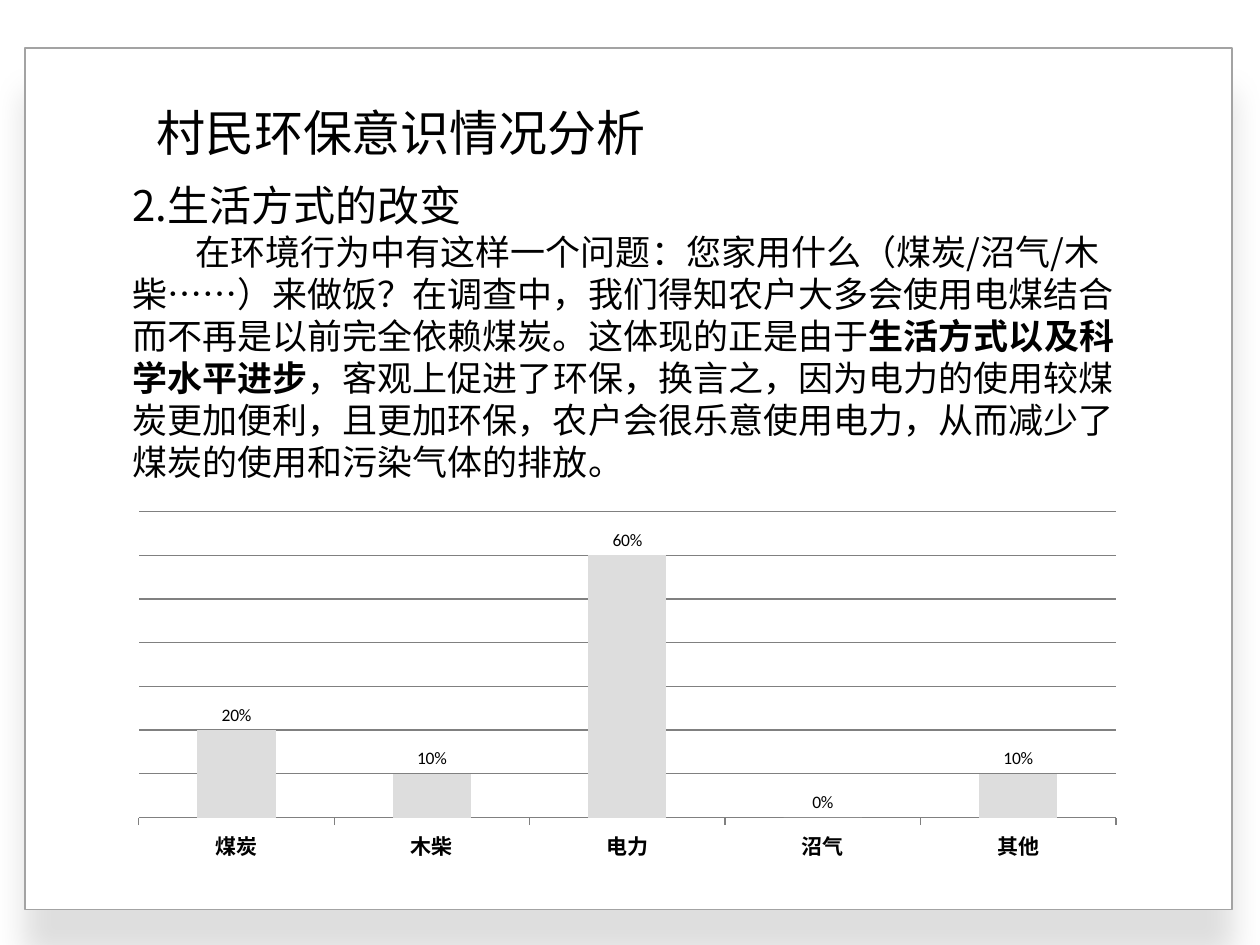
from lxml.etree import SubElement
from pptx import Presentation
from pptx.chart.data import CategoryChartData
from pptx.dml.color import RGBColor
from pptx.enum.chart import XL_CHART_TYPE, XL_LABEL_POSITION, XL_TICK_LABEL_POSITION, XL_TICK_MARK
from pptx.enum.shapes import MSO_SHAPE
from pptx.enum.text import MSO_ANCHOR, MSO_AUTO_SIZE, PP_ALIGN
from pptx.oxml import parse_xml
from pptx.oxml.ns import nsdecls, qn
from pptx.util import Inches, Pt

CJK = "Noto Sans CJK SC"


def color(hex_value):
    return RGBColor.from_string(hex_value)


def format_paragraph(paragraph, size, line_height):
    paragraph.alignment = PP_ALIGN.LEFT
    paragraph.space_before = Pt(0)
    paragraph.line_spacing = Pt(line_height)
    for run in paragraph.runs:
        run.font.size = Pt(size)
        run.font.name = CJK
        run.font.color.rgb = color("000000")
        SubElement(run.font._element, qn("a:ea")).set("typeface", CJK)


deck = Presentation()
deck.slide_width, deck.slide_height = Inches(10), Inches(7.5)
slide = deck.slides.add_slide(deck.slide_layouts[1])
title, body = slide.placeholders

# Framed page with a soft shadow, behind everything else
frame = slide.shapes.add_shape(MSO_SHAPE.RECTANGLE, Inches(0.2), Inches(0.38),
                               Inches(9.58), Inches(6.84))
frame.fill.solid()
frame.fill.fore_color.rgb = color("FFFFFF")
frame.line.color.rgb = color("A3A3A3")
frame.line.width = Pt(1)
frame._element.spPr.append(parse_xml(
    f'<a:effectLst {nsdecls("a")}><a:outerShdw blurRad="{Pt(18)}" dist="{Pt(26)}" '
    'dir="5400000" algn="ctr" rotWithShape="0"><a:srgbClr val="000000">'
    '<a:alpha val="12000"/></a:srgbClr></a:outerShdw></a:effectLst>'))
slide.shapes._spTree.insert(2, frame._element)

# Title and body placeholders
for holder, box, wrap in ((title, (1.14, 0.73, 4.09, 0.9), False),
                          (body, (0.95, 1.36, 8.21, 2.52), True)):
    holder.left, holder.top, holder.width, holder.height = map(Inches, box)
    holder.text_frame.auto_size = MSO_AUTO_SIZE.NONE
    holder.text_frame.vertical_anchor = MSO_ANCHOR.TOP
    holder.text_frame.word_wrap = wrap

title.text_frame.text = "村民环保意识情况分析"
format_paragraph(title.text_frame.paragraphs[0], 28, 36)

# Heading and explanation, with the key phrase in bold
body.text_frame.text = "2.生活方式的改变"
heading = body.text_frame.paragraphs[0]
explanation = body.text_frame.add_paragraph()
for phrase, bold in (
    ("在环境行为中有这样一个问题：您家用什么（煤炭/沼气/木柴……）来做饭？"
     "在调查中，我们得知农户大多会使用电煤结合而不再是以前完全依赖煤炭。这体现的正是由于", False),
    ("生活方式以及科学水平进步", True),
    ("，客观上促进了环保，换言之，因为电力的使用较煤炭更加便利，且更加环保，"
     "农户会很乐意使用电力，从而减少了煤炭的使用和污染气体的排放。", False),
):
    run = explanation.add_run()
    run.text = phrase
    run.font.bold = bold
for paragraph, size, line_height, indent in ((heading, 24, 30, 0), (explanation, 20, 24, 0.5)):
    properties = paragraph._p.get_or_add_pPr()
    properties.set("marL", "0")
    properties.set("indent", str(Inches(indent)))
    SubElement(properties, qn("a:buNone"))
    format_paragraph(paragraph, size, line_height)

# Cooking fuel chart
fuel_data = CategoryChartData(number_format="0%")
fuel_data.categories = ["煤炭", "木柴", "电力", "沼气", "其他"]
fuel_data.add_series("Series 1", (0.2, 0.1, 0.6, 0, 0.1))
fuel_chart = slide.shapes.add_chart(XL_CHART_TYPE.COLUMN_CLUSTERED, Inches(1.02), Inches(3.88),
                                    Inches(8.08), Inches(3), fuel_data).chart
fuel_chart.has_legend = False
fuel_chart.has_title = False
fuel_chart.font.size = Pt(10)
fuel_chart.font.name = "Calibri"
fuel_chart.font.color.rgb = color("000000")

plot = fuel_chart.plots[0]
plot.gap_width = 150
plot.vary_by_categories = False
bars = plot.series[0].format.fill
bars.solid()
bars.fore_color.rgb = color("DDDDDD")

plot.has_data_labels = True
labels = plot.data_labels
labels.show_value = True
labels.position = XL_LABEL_POSITION.OUTSIDE_END
labels.number_format, labels.number_format_is_linked = "0%", False
labels.font.size = Pt(10)
labels.font.color.rgb = color("000000")

# Axes: bold fuel names, hidden value scale with gridlines
fuels, share = fuel_chart.category_axis, fuel_chart.value_axis
fuels.major_tick_mark = XL_TICK_MARK.OUTSIDE
fuels.tick_label_position = XL_TICK_LABEL_POSITION.LOW
fuels.tick_labels.font.size = Pt(12)
fuels.tick_labels.font.bold = True
fuels.tick_labels.font.color.rgb = color("000000")
share.visible = False
share.minimum_scale, share.maximum_scale, share.major_unit = 0, 0.7, 0.1
share.has_major_gridlines = True
for line in (share.major_gridlines.format.line, fuels.format.line):
    line.color.rgb = color("808080")
    line.width = Pt(0.75)

# Fixed inner plot area, as shares of the chart
plot_area = fuel_chart._chartSpace.chart.plotArea
for old_layout in plot_area.findall(qn("c:layout")):
    plot_area.remove(old_layout)
places = "".join(f'<c:{key} val="{value}"/>' for key, value in
                 (("layoutTarget", "inner"), ("xMode", "edge"), ("yMode", "edge"),
                  ("x", 0.01), ("y", 0.06), ("w", 0.96), ("h", 0.81)))
plot_area.insert(0, parse_xml(
    f'<c:layout {nsdecls("c")}><c:manualLayout>{places}</c:manualLayout></c:layout>'))

deck.save("out.pptx")
